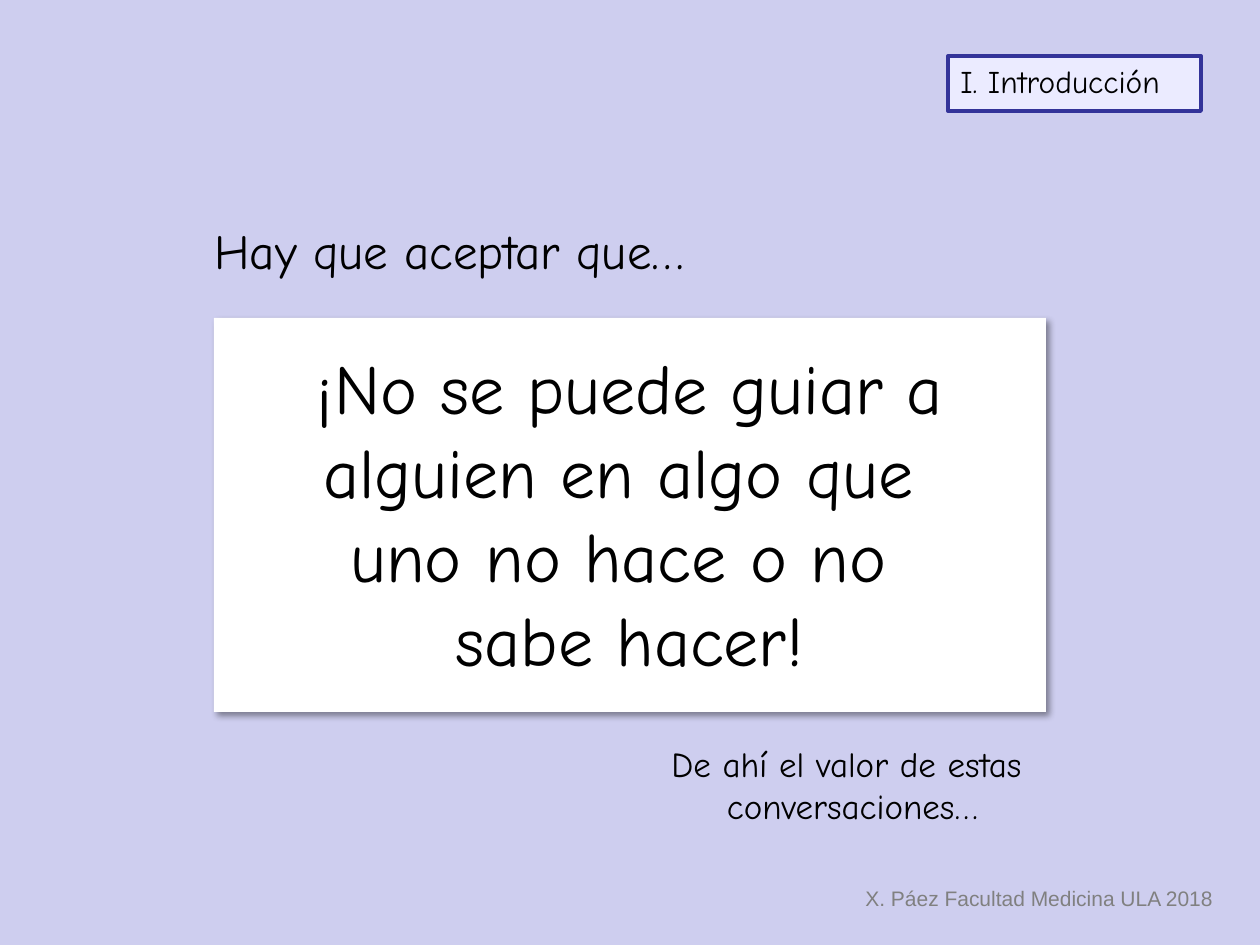
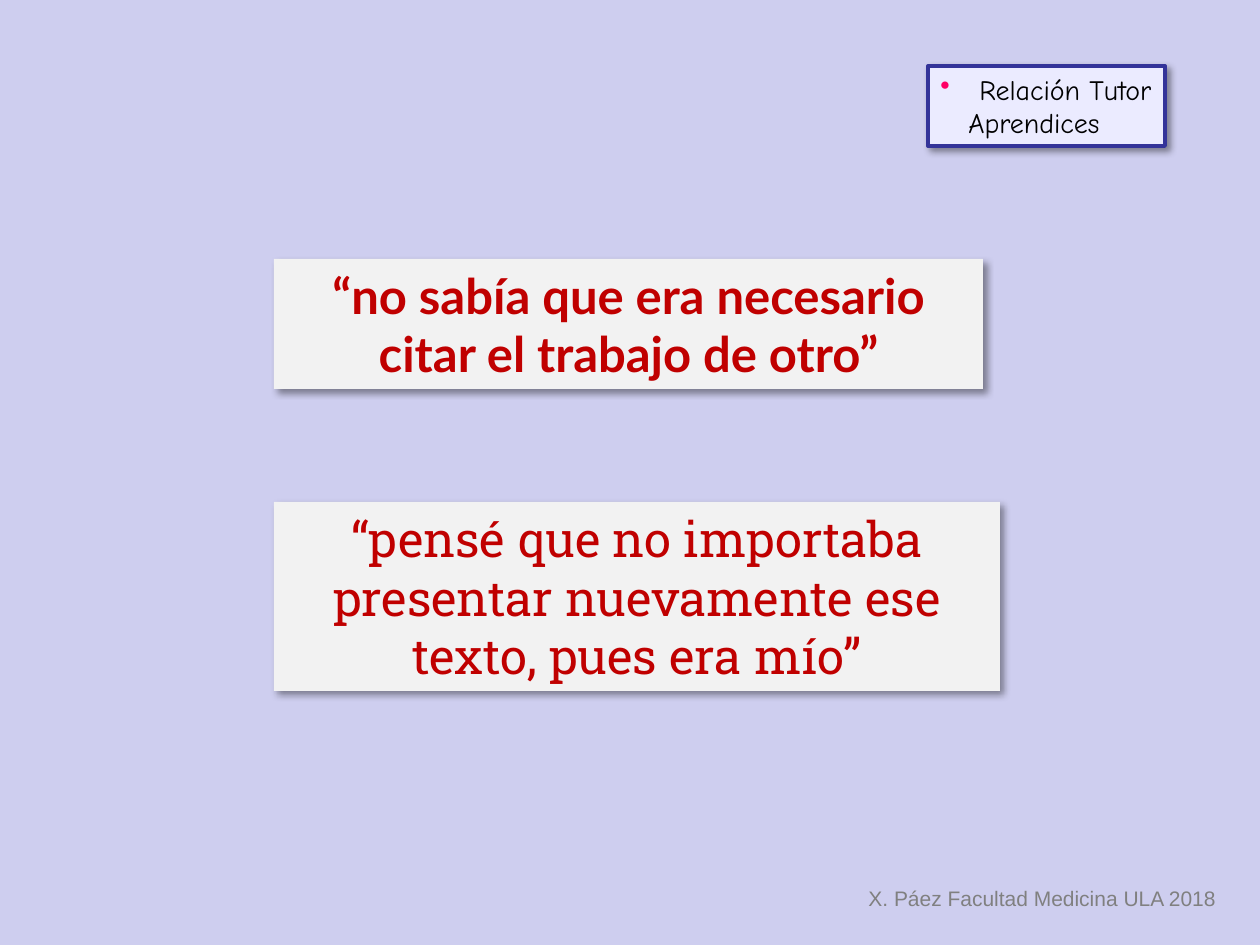
from lxml.etree import SubElement
from pptx import Presentation
from pptx.dml.color import RGBColor
from pptx.enum.shapes import MSO_SHAPE
from pptx.enum.text import MSO_ANCHOR, MSO_AUTO_SIZE, PP_ALIGN
from pptx.oxml.ns import qn
from pptx.util import Pt

SCALE = 914400 / 126
PAGE, WHITE, PALE, GREY = "CECEEF", "FFFFFF", "EBEBFF", "F2F2F2"
NAVY, INK, RED, PINK, FOOT = "333399", "000000", "C00000", "FF0066", "808080"
HAND = "Comic Neue"


def px(n):
    return round(n * SCALE)


def color(code):
    return RGBColor.from_string(code)


def shade(shape):
    """Soft shadow towards the lower right."""
    fx = SubElement(shape._element.spPr, qn("a:effectLst"))
    drop = SubElement(fx, qn("a:outerShdw"), blurRad=str(Pt(4)), dist=str(Pt(3)),
                      dir="2700000", algn="tl", rotWithShape="0")
    tint = SubElement(drop, qn("a:srgbClr"), val=INK)
    SubElement(tint, qn("a:alpha"), val="40000")


def write(shape, lines, size, font=HAND, ink=INK, center=False, bold=False, wrap=False):
    frame = shape.text_frame
    frame.word_wrap = wrap
    frame.auto_size = MSO_AUTO_SIZE.SHAPE_TO_FIT_TEXT
    frame.vertical_anchor = MSO_ANCHOR.TOP
    frame.text = "\n".join(lines)
    for par in frame.paragraphs:
        par.alignment = PP_ALIGN.CENTER if center else PP_ALIGN.LEFT
        face = par.font
        face.size, face.name, face.bold = Pt(size), font, bold
        face.color.rgb = color(ink)


def label(slide, box, lines, size, **style):
    write(slide.shapes.add_textbox(*map(px, box)), lines, size, **style)


def panel(slide, box, fill, edge=None, shadow=True):
    shape = slide.shapes.add_shape(MSO_SHAPE.RECTANGLE, *map(px, box))
    shape.fill.solid()
    shape.fill.fore_color.rgb = color(fill)
    if edge:
        shape.line.color.rgb = color(edge)
        shape.line.width = Pt(2.25)
    else:
        shape.line.fill.background()
    if shadow:
        shade(shape)
    else:
        shape.shadow.inherit = False
    return shape


def tag(slide, box, lines, size, shadow=False):
    """Section tag at the top right."""
    shape = panel(slide, box, PALE, NAVY, shadow)
    write(shape, lines, size)
    return shape


def indent(par, left, mark=None):
    props = par._p.get_or_add_pPr()
    props.set("marL", str(px(left)))
    if mark:
        props.set("indent", str(-px(left)))
        tint = props.makeelement(qn("a:buClr"))
        SubElement(tint, qn("a:srgbClr"), val=PINK)
        sign = props.makeelement(qn("a:buChar"), char=mark)
        props.insert(0, tint)
        props.insert(1, sign)


def quote(slide, box, text, font, bold=False):
    shape = panel(slide, box, GREY)
    write(shape, [text], 28, font, RED, center=True, bold=bold, wrap=True)


def page(deck, foot):
    slide = deck.slides.add_slide(deck.slide_layouts[6])
    back = slide.background.fill
    back.solid()
    back.fore_color.rgb = color(PAGE)
    label(slide, (foot, 879, 386, 38), ["X. Páez Facultad Medicina ULA 2018"],
          12, font="Arial", ink=FOOT)
    return slide


def intro(deck):
    slide = page(deck, 853)
    # Main statement
    card = panel(slide, (214, 318, 832, 394), WHITE)
    write(card, ["¡No se puede guiar a alguien en algo que ", "uno no hace o no ",
                 "sabe hacer!"], 40, center=True, wrap=True)
    card.text_frame.margin_top = card.text_frame.margin_bottom = px(27)
    # Lead-in and conclusion
    label(slide, (202, 214, 522, 72), ["Hay que aceptar que…"], 28)
    label(slide, (644, 736, 417, 97), ["De ahí el valor de estas ", "conversaciones…"],
          20, center=True)
    tag(slide, (948, 56, 253, 55), ["I. Introducción"], 18)


def tutor(deck):
    slide = page(deck, 856)
    # Quotes from learners
    quote(slide, (274, 259, 709, 130),
          "“no sabía que era necesario citar el trabajo de otro”", "Lato", bold=True)
    quote(slide, (274, 502, 726, 189),
          "“pensé que no importaba presentar nuevamente ese texto, pues era mío”",
          "Roboto Slab")
    # Tag with a bullet
    head = tag(slide, (928, 66, 237, 80), ["Relación Tutor", "Aprendices"], 16, shadow=True)
    first, second = head.text_frame.paragraphs
    indent(first, 39, "•")
    indent(second, 28)


def main():
    deck = Presentation()
    deck.slide_width, deck.slide_height = px(1260), px(945)
    intro(deck)
    tutor(deck)
    deck.save("out.pptx")


if __name__ == "__main__":
    main()
